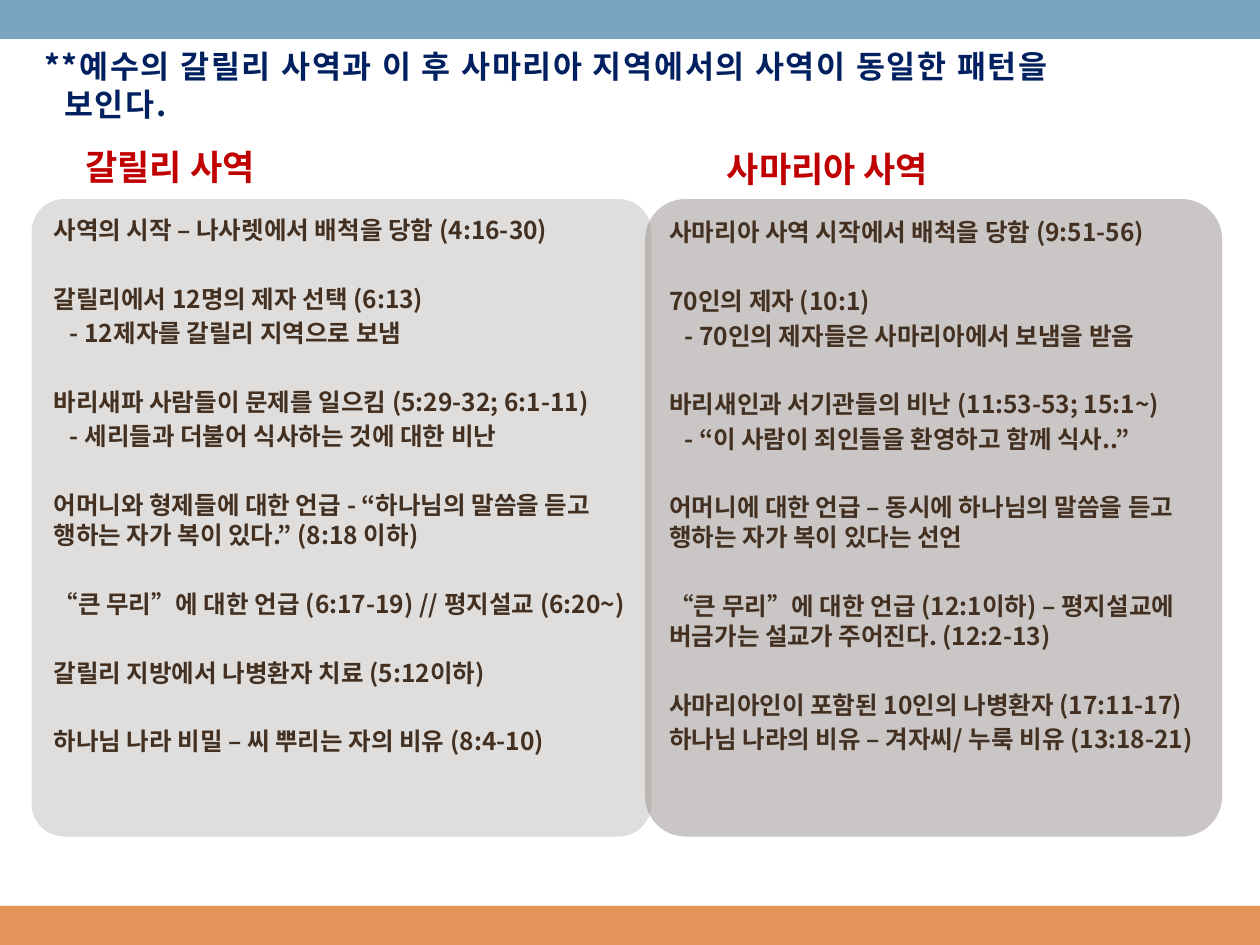
from lxml.etree import SubElement
from pptx import Presentation
from pptx.dml.color import RGBColor
from pptx.enum.shapes import MSO_SHAPE as SHAPE
from pptx.enum.text import MSO_ANCHOR as ANCHOR, MSO_AUTO_SIZE as AUTO, PP_ALIGN as ALIGN
from pptx.oxml.ns import qn
from pptx.util import Inches, Pt

FONT = "Noto Sans CJK KR"
NAVY = RGBColor(0x00, 0x20, 0x60)
RED = RGBColor(0xC0, 0x00, 0x00)
BROWN = RGBColor(0x43, 0x30, 0x21)
BLUE = RGBColor(0x7B, 0xA5, 0xBE)
ORANGE = RGBColor(0xE4, 0x94, 0x58)
LIGHT_GREY = RGBColor(0xC0, 0xBE, 0xBD)
DARK_GREY = RGBColor(0x94, 0x8F, 0x8D)

TITLE = "**예수의 갈릴리 사역과 이 후 사마리아 지역에서의 사역이 동일한 패턴을\v보인다."
BANDS = [(0, BLUE), (7.19, ORANGE)]
MINISTRIES = [
    {
        "heading": "갈릴리 사역", "heading_box": (0.58, 1.1, 1.86, 0.44),
        "panel_box": (0.25, 1.58, 4.92, 5.06), "corner": 0.053, "color": LIGHT_GREY,
        "sub_indent": 0.13,
        "groups": [
            ["사역의 시작 – 나사렛에서 배척을 당함 (4:16-30)"],
            ["갈릴리에서 12명의 제자 선택 (6:13)", "- 12제자를 갈릴리 지역으로 보냄"],
            ["바리새파 사람들이 문제를 일으킴 (5:29-32; 6:1-11)",
             "- 세리들과 더불어 식사하는 것에 대한 비난"],
            ["어머니와 형제들에 대한 언급 - “하나님의 말씀을 듣고 행하는 자가 복이 있다.” (8:18 이하)"],
            ["“큰 무리”에 대한 언급 (6:17-19) // 평지설교 (6:20~)"],
            ["갈릴리 지방에서 나병환자 치료 (5:12이하)"],
            ["하나님 나라 비밀 – 씨 뿌리는 자의 비유 (8:4-10)"],
        ],
    },
    {
        "heading": "사마리아 사역", "heading_box": (5.67, 1.12, 2.25, 0.44),
        "panel_box": (5.12, 1.58, 4.58, 5.06), "corner": 0.07, "color": DARK_GREY,
        "sub_indent": 0.12,
        "groups": [
            ["사마리아 사역 시작에서 배척을 당함 (9:51-56)"],
            ["70인의 제자 (10:1)", "- 70인의 제자들은 사마리아에서 보냄을 받음"],
            ["바리새인과 서기관들의 비난 (11:53-53; 15:1~)",
             "- “이 사람이 죄인들을 환영하고 함께 식사..”"],
            ["어머니에 대한 언급 – 동시에 하나님의 말씀을 듣고 행하는 자가 복이 있다는 선언"],
            ["“큰 무리”에 대한 언급 (12:1이하) – 평지설교에 버금가는 설교가 주어진다. (12:2-13)"],
            ["사마리아인이 포함된 10인의 나병환자 (17:11-17)",
             "하나님 나라의 비유 – 겨자씨/ 누룩 비유 (13:18-21)"],
        ],
    },
]
LINE, ITEM_GAP, GROUP_GAP = Pt(17), Pt(2.6), Pt(22.3)


def style(paragraph, size, color):
    font = paragraph.font
    font.name, font.size, font.bold = FONT, Pt(size), True
    font.color.rgb = color
    SubElement(font._element, qn("a:ea"), typeface=FONT)
    paragraph.alignment = ALIGN.LEFT


def indent(paragraph, left, first=0):
    properties = paragraph._p.get_or_add_pPr()
    properties.set("marL", str(Inches(left)))
    properties.set("indent", str(Inches(first)))


def add_block(slide, kind, box, color):
    block = slide.shapes.add_shape(kind, *map(Inches, box))
    block.shadow.inherit = False
    block.fill.solid()
    block.fill.fore_color.rgb = color
    block.line.fill.background()
    return block


def add_title(slide):
    title = slide.shapes.title
    title.left, title.top, title.width, title.height = map(Inches, (0.25, 0.42, 9.35, 0.5))
    frame = title.text_frame
    frame.text = TITLE
    frame.auto_size, frame.vertical_anchor = AUTO.NONE, ANCHOR.MIDDLE
    paragraph = frame.paragraphs[0]
    style(paragraph, 18, NAVY)
    paragraph.line_spacing = Pt(21.7)
    indent(paragraph, 0.16, -0.16)
    for run in paragraph.runs:
        run.font._element.set("spc", "100")


def add_heading(slide, ministry):
    heading = slide.shapes.add_textbox(*map(Inches, ministry["heading_box"]))
    frame = heading.text_frame
    frame.text, frame.vertical_anchor = ministry["heading"], ANCHOR.MIDDLE
    style(frame.paragraphs[0], 20, RED)


def add_panel(slide, ministry):
    panel = add_block(slide, SHAPE.ROUNDED_RECTANGLE, ministry["panel_box"], ministry["color"])
    panel.adjustments[0] = ministry["corner"]
    tint = panel._element.spPr.find(qn("a:solidFill"))[0]
    SubElement(tint, qn("a:alpha"), val="50000")
    frame = panel.text_frame
    frame.word_wrap, frame.vertical_anchor = True, ANCHOR.TOP
    for group_number, group in enumerate(ministry["groups"]):
        for item_number, item in enumerate(group):
            first = group_number == item_number == 0
            paragraph = frame.paragraphs[0] if first else frame.add_paragraph()
            paragraph.text = item
            style(paragraph, 14, BROWN)
            paragraph.line_spacing = LINE
            if not first:
                paragraph.space_before = ITEM_GAP if item_number else GROUP_GAP
            if item.startswith("-"):
                indent(paragraph, ministry["sub_indent"])


def main():
    deck = Presentation()
    deck.slide_width, deck.slide_height = Inches(10), Inches(7.5)
    slide = deck.slides.add_slide(deck.slide_layouts[5])
    for top, color in BANDS:
        add_block(slide, SHAPE.RECTANGLE, (0, top, 10, 0.31), color)
    add_title(slide)
    for ministry in MINISTRIES:
        add_panel(slide, ministry)
        add_heading(slide, ministry)
    deck.save("out.pptx")


if __name__ == "__main__":
    main()
